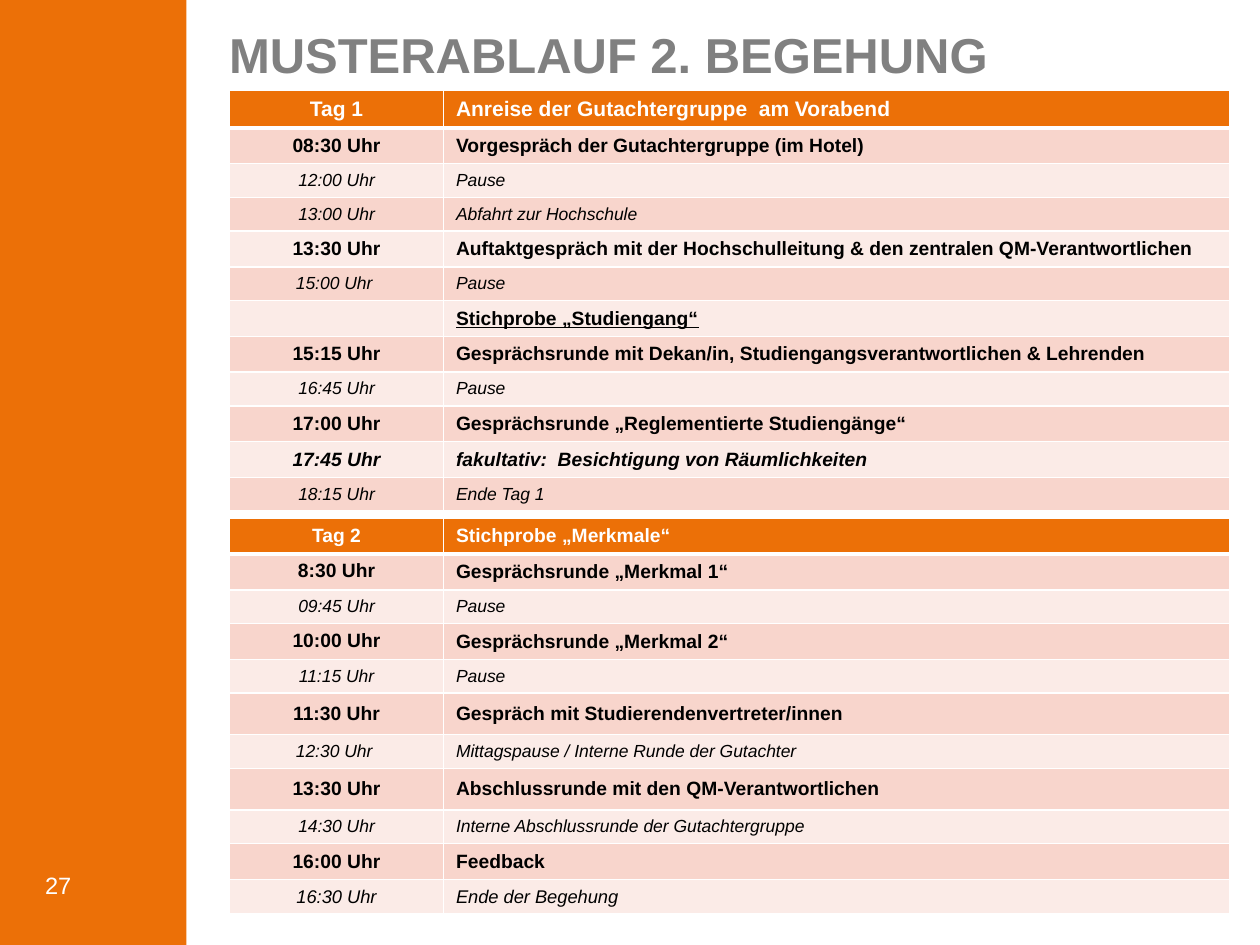
from dataclasses import dataclass

from lxml.etree import SubElement
from pptx import Presentation
from pptx.dml.color import RGBColor
from pptx.enum.shapes import MSO_SHAPE as Shape
from pptx.enum.text import MSO_ANCHOR as Anchor, PP_ALIGN as Align
from pptx.oxml.ns import qn
from pptx.util import Cm, Pt

COLORS = {
    "accent": "EC7007",
    "title": "808080",
    "text": "000000",
    "white": "FFFFFF",
    "band_dark": "F8D5CC",
    "band_light": "FBEBE7",
}
FONT = "Arial"
TABLE_LEFT = 4.63
COLUMN_WIDTHS = (4.31, 15.86)


@dataclass(frozen=True)
class Style:
    size: float
    height: float = 0.72
    bold: bool = False
    italic: bool = False
    underline: bool = False
    color: str = "text"
    time_anchor: Anchor = Anchor.MIDDLE


@dataclass(frozen=True)
class Entry:
    time: str
    topic: str
    style: Style


DAY_1 = Style(12, 0.77, bold=True, color="white")
DAY_2 = Style(11, bold=True, color="white")
SESSION = Style(11, bold=True)
SESSION_TOP = Style(11, bold=True, time_anchor=Anchor.TOP)
SESSION_TALL = Style(11, 0.84, bold=True)
SAMPLE = Style(11, bold=True, underline=True)
OPTIONAL = Style(11, bold=True, italic=True)
BREAK = Style(10, 0.67, italic=True)
CLOSING = Style(10.5, 0.69, italic=True)

FIRST_DAY = [
    Entry("Tag 1", "Anreise der Gutachtergruppe  am Vorabend", DAY_1),
    Entry("08:30 Uhr", "Vorgespräch der Gutachtergruppe (im Hotel)", SESSION),
    Entry("12:00 Uhr", "Pause", BREAK),
    Entry("13:00 Uhr", "Abfahrt zur Hochschule", BREAK),
    Entry("13:30 Uhr", "Auftaktgespräch mit der Hochschulleitung & den zentralen QM-Verantwortlichen", SESSION),
    Entry("15:00 Uhr ", "Pause", BREAK),
    Entry("", "Stichprobe „Studiengang“", SAMPLE),
    Entry("15:15 Uhr", "Gesprächsrunde mit Dekan/in, Studiengangsverantwortlichen & Lehrenden", SESSION),
    Entry("16:45 Uhr", "Pause", BREAK),
    Entry("17:00 Uhr", "Gesprächsrunde „Reglementierte Studiengänge“", SESSION),
    Entry("17:45 Uhr", "fakultativ:  Besichtigung von Räumlichkeiten", OPTIONAL),
    Entry("18:15 Uhr", "Ende Tag 1", BREAK),
]
SECOND_DAY = [
    Entry("Tag 2", "Stichprobe „Merkmale“", DAY_2),
    Entry("8:30 Uhr", "Gesprächsrunde „Merkmal 1“", SESSION_TOP),
    Entry("09:45 Uhr", "Pause", BREAK),
    Entry("10:00 Uhr", "Gesprächsrunde „Merkmal 2“", SESSION_TOP),
    Entry("11:15 Uhr", "Pause", BREAK),
    Entry("11:30 Uhr", "Gespräch mit Studierendenvertreter/innen", SESSION_TALL),
    Entry("12:30 Uhr ", "Mittagspause / Interne Runde der Gutachter", BREAK),
    Entry("13:30 Uhr", "Abschlussrunde mit den QM-Verantwortlichen", SESSION_TALL),
    Entry("14:30 Uhr", "Interne Abschlussrunde der Gutachtergruppe", BREAK),
    Entry("16:00 Uhr", "Feedback", SESSION),
    Entry("16:30 Uhr", "Ende der Begehung", CLOSING),
]


def rgb(name: str) -> RGBColor:
    return RGBColor.from_string(COLORS[name])


def add_run(paragraph, text: str, style: Style) -> None:
    run = paragraph.add_run()
    run.text = text
    font = run.font
    font.name, font.size = FONT, Pt(style.size)
    font.bold, font.italic, font.underline = style.bold, style.italic, style.underline
    font.color.rgb = rgb(style.color)


def set_borders(cell, row: int) -> None:
    """Draw white cell borders, with a thick rule below the header row."""
    widths = {"lnL": 1, "lnR": 1, "lnT": 3 if row == 1 else 1, "lnB": 3 if row == 0 else 1}
    properties = cell._tc.get_or_add_tcPr()
    for side, width in widths.items():
        line = SubElement(properties, qn(f"a:{side}"), w=str(Pt(width)))
        fill = SubElement(line, qn("a:solidFill"))
        SubElement(fill, qn("a:srgbClr"), val=COLORS["white"])


def fill_cell(cell, text: str, style: Style, row: int, align: Align, anchor: Anchor) -> None:
    set_borders(cell, row)
    cell.fill.solid()
    cell.fill.fore_color.rgb = rgb("accent" if row == 0 else "band_dark" if row % 2 else "band_light")
    cell.vertical_anchor = anchor
    paragraph = cell.text_frame.paragraphs[0]
    paragraph.alignment = align
    if text:
        add_run(paragraph, text, style)
    else:  # keeps the default text size from stretching the row
        SubElement(paragraph._p, qn("a:endParaRPr"), sz=str(style.size * 100))


def add_schedule(slide, top: float, entries: list[Entry]) -> None:
    height = sum(entry.style.height for entry in entries)
    schedule = slide.shapes.add_table(
        len(entries), 2, Cm(TABLE_LEFT), Cm(top), Cm(sum(COLUMN_WIDTHS)), Cm(height)
    ).table
    for column, width in zip(schedule.columns, COLUMN_WIDTHS):
        column.width = Cm(width)
    for row, entry in enumerate(entries):
        style = entry.style
        schedule.rows[row].height = Cm(style.height)
        fill_cell(schedule.cell(row, 0), entry.time, style, row, Align.CENTER, style.time_anchor)
        fill_cell(schedule.cell(row, 1), entry.topic, style, row, Align.LEFT, Anchor.MIDDLE)


def add_label(slide, box: tuple, text: str, style: Style, anchor: Anchor, spacing: float = 1.0) -> None:
    frame = slide.shapes.add_textbox(*map(Cm, box)).text_frame
    frame.word_wrap = True
    frame.vertical_anchor = anchor
    paragraph = frame.paragraphs[0]
    paragraph.line_spacing = spacing
    add_run(paragraph, text, style)


def add_sidebar(slide, width: float, height: float) -> None:
    sidebar = slide.shapes.add_shape(Shape.RECTANGLE, 0, 0, Cm(width), Cm(height))
    sidebar.shadow.inherit = False
    sidebar.fill.solid()
    sidebar.fill.fore_color.rgb = rgb("accent")
    sidebar.line.fill.background()


def main() -> None:
    deck = Presentation()
    deck.slide_width, deck.slide_height = Cm(25.4), Cm(19.05)
    slide = deck.slides.add_slide(deck.slide_layouts[6])

    add_sidebar(slide, 3.76, 19.05)
    add_label(slide, (4.37, 0.51, 19.51, 1.57), "MUSTERABLAUF 2. BEGEHUNG",
              Style(28, bold=True, color="title"), Anchor.TOP, spacing=0.9)
    add_schedule(slide, 1.81, FIRST_DAY)
    add_schedule(slide, 10.45, SECOND_DAY)
    add_label(slide, (0.66, 16.89, 2.34, 1.37), "27", Style(13.5, color="white"), Anchor.BOTTOM)

    deck.save("out.pptx")


if __name__ == "__main__":
    main()
